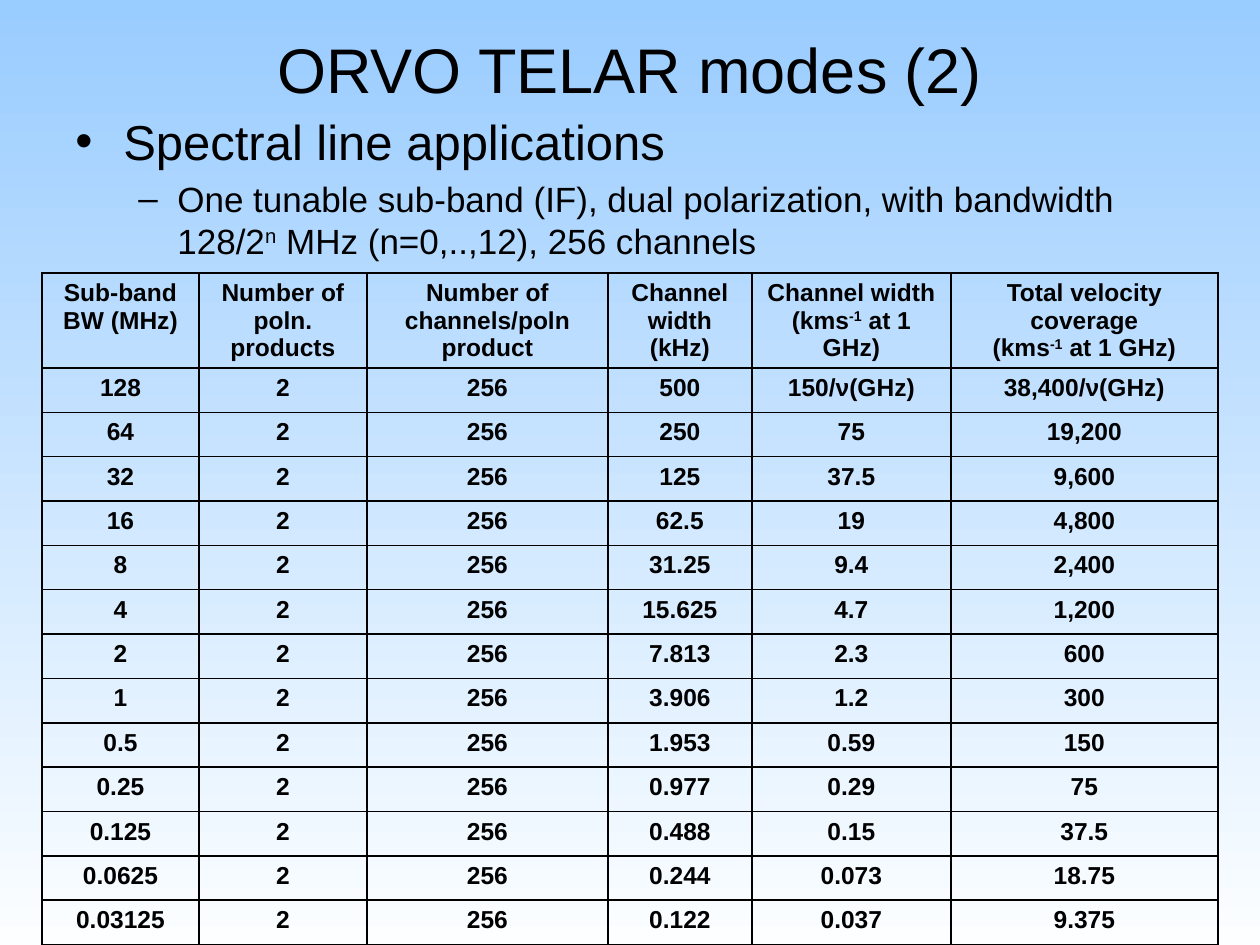
from lxml import etree
from pptx import Presentation
from pptx import util as u
from pptx.dml.color import RGBColor
from pptx.enum import text
from pptx.oxml import ns

PX = 914400 / 126
FONT = "Arial"
BLACK = RGBColor(0x00, 0x00, 0x00)
SKY = RGBColor(0x99, 0xCC, 0xFF)
PALE = RGBColor(0xFC, 0xFE, 0xFF)
CENTER = text.PP_ALIGN.CENTER

# Table content: ^ marks the start and end of a superscript
HEADS = [
    "Sub-band\nBW (MHz)",
    "Number of\npoln. products",
    "Number of\nchannels/poln product",
    "Channel\nwidth (kHz)",
    "Channel width\n(kms^-1^ at 1 GHz)",
    "Total velocity coverage\n(kms^-1^ at 1 GHz)",
]
# Sub-band width, channel width, channel velocity, total velocity
MODES = [
    ("128", "500", "150/ν(GHz)", "38,400/ν(GHz)"),
    ("64", "250", "75", "19,200"),
    ("32", "125", "37.5", "9,600"),
    ("16", "62.5", "19", "4,800"),
    ("8", "31.25", "9.4", "2,400"),
    ("4", "15.625", "4.7", "1,200"),
    ("2", "7.813", "2.3", "600"),
    ("1", "3.906", "1.2", "300"),
    ("0.5", "1.953", "0.59", "150"),
    ("0.25", "0.977", "0.29", "75"),
    ("0.125", "0.488", "0.15", "37.5"),
    ("0.0625", "0.244", "0.073", "18.75"),
    ("0.03125", "0.122", "0.037", "9.375"),
]
POLNS, CHANNELS = "2", "256"
WIDTHS = [157, 168, 241, 144, 199, 267]
HEAD_H, BODY_H = 95, 577


def px(n):
    return u.Emu(round(n * PX))


def add_xml(parent, tag, **attrs):
    node = etree.SubElement(parent, ns.qn(tag))
    for name, value in attrs.items():
        node.set(name, str(value))
    return node


def write(para, words, size, bold=False, align=None):
    """Fill a paragraph; every second part between ^ is superscript."""
    para.alignment = align
    for i, part in enumerate(words.split("^")):
        run = para.add_run()
        run.text = part
        font = run.font
        font.name, font.size, font.bold = FONT, u.Pt(size), bold
        font.color.rgb = BLACK
        if i % 2:
            run._r.get_or_add_rPr().set("baseline", "30000")


def add_box(slide, left, top, width, height):
    frame = slide.shapes.add_textbox(*map(px, (left, top, width, height))).text_frame
    frame.word_wrap = True
    return frame


def add_bullet(para, words, mark, level, size, indent, hang):
    write(para, words, size)
    para.level = level
    para.space_before = u.Pt(size * 0.2)
    props = para._p.get_or_add_pPr()
    props.set("marL", str(px(indent)))
    props.set("indent", str(-px(hang)))
    add_xml(props, "a:buFont", typeface=FONT)
    add_xml(props, "a:buChar", char=mark)


def style_cell(cell, words):
    cell.margin_bottom = 0
    for i, line in enumerate(words.split("\n")):
        frame = cell.text_frame
        para = frame.add_paragraph() if i else frame.paragraphs[0]
        write(para, line, 14, True, CENTER)
    props = cell._tc.get_or_add_tcPr()
    for side in ("a:lnL", "a:lnR", "a:lnT", "a:lnB"):
        line = add_xml(props, side, w=u.Pt(1))
        add_xml(add_xml(line, "a:solidFill"), "a:srgbClr", val=BLACK)
    cell.fill.background()


def add_grid(slide, left, top):
    rows = [HEADS] + [(band, POLNS, CHANNELS, *rest) for band, *rest in MODES]
    count = len(MODES)
    table = slide.shapes.add_table(
        len(rows), len(WIDTHS), px(left), px(top), px(sum(WIDTHS)), px(HEAD_H + BODY_H)
    ).table
    table.first_row = table.horz_banding = False
    for col, width in zip(table.columns, WIDTHS):
        col.width = px(width)
    for r, (row, words) in enumerate(zip(table.rows, rows)):
        row.height = px(BODY_H / count if r else HEAD_H)
        for cell, word in zip(row.cells, words):
            style_cell(cell, word)


def paint_back(slide):
    fill = slide.background.fill
    fill.gradient()
    fill.gradient_angle = 270
    for stop, color in zip(fill.gradient_stops, (SKY, PALE)):
        stop.color.rgb = color


def main():
    deck = Presentation()
    deck.slide_width, deck.slide_height = px(1260), px(945)
    slide = deck.slides.add_slide(deck.slide_layouts[6])
    paint_back(slide)

    # Bullets
    body = add_box(slide, 63, 105, 1134, 168)
    add_bullet(body.paragraphs[0], "Spectral line applications", "•", 0, 28, 48, 48)
    add_bullet(
        body.add_paragraph(),
        "One tunable sub-band (IF), dual polarization, with bandwidth "
        "128/2^n^ MHz (n=0,..,12), 256 channels",
        "–", 1, 20, 102, 39,
    )

    # Title
    title = add_box(slide, 63, 21, 1134, 95)
    title.vertical_anchor = text.MSO_ANCHOR.MIDDLE
    write(title.paragraphs[0], "ORVO TELAR modes (2)", 36, align=CENTER)

    # Table of modes
    add_grid(slide, 42, 273)
    deck.save("out.pptx")


if __name__ == "__main__":
    main()
